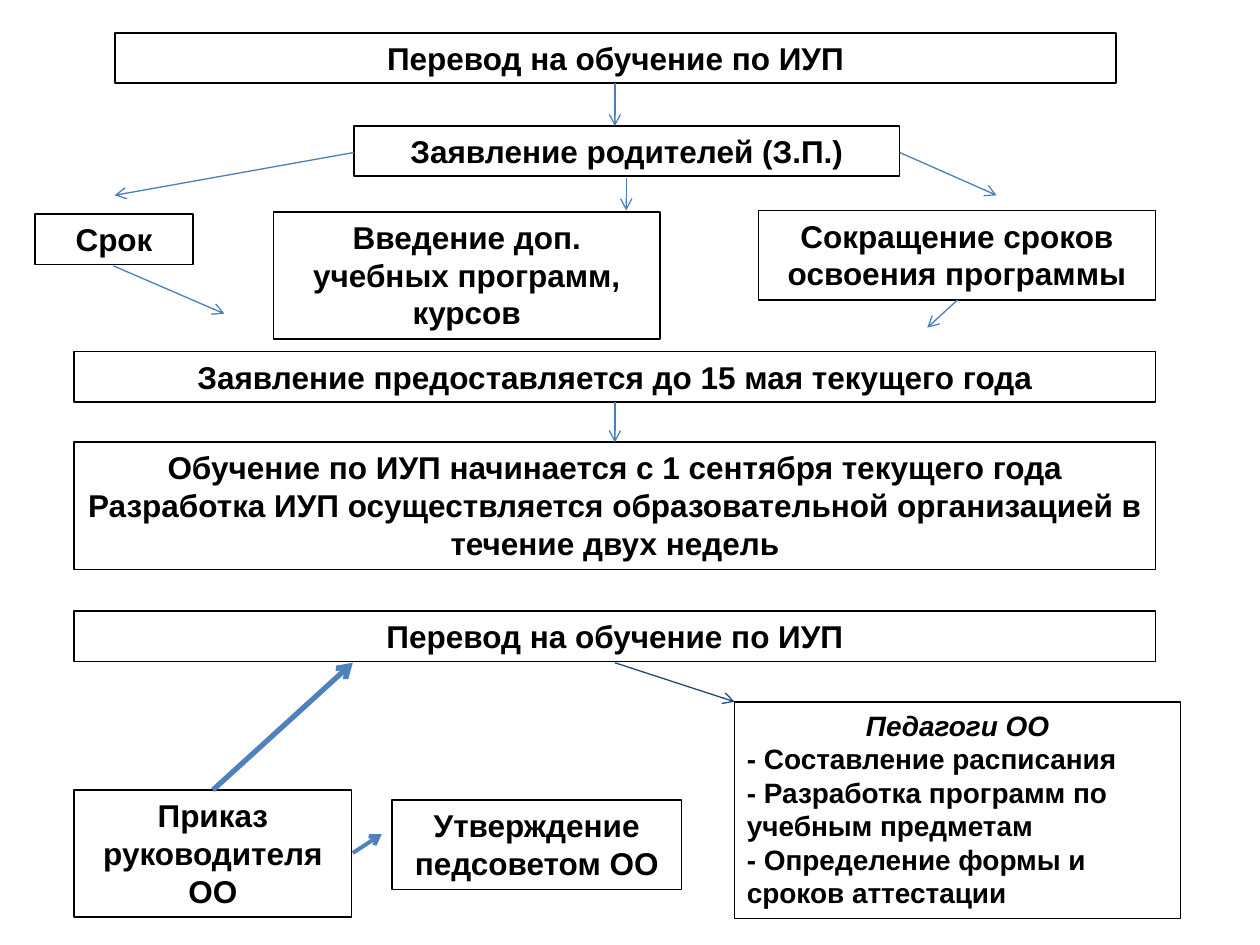
from lxml import etree
from pptx import Presentation
from pptx.dml.color import RGBColor
from pptx.enum.shapes import MSO_CONNECTOR
from pptx.enum.text import MSO_ANCHOR, MSO_AUTO_SIZE, PP_ALIGN
from pptx.oxml.ns import qn
from pptx.util import Inches, Pt

STRAIGHT = MSO_CONNECTOR.STRAIGHT
TOP = MSO_ANCHOR.TOP
FIXED, GROW = MSO_AUTO_SIZE.NONE, MSO_AUTO_SIZE.SHAPE_TO_FIT_TEXT
LEFT, CENTER = PP_ALIGN.LEFT, PP_ALIGN.CENTER

FONT = "Arial"
BLACK, BLUE, BOLD_BLUE, NAVY = "000000", "4B7EBC", "4F81BD", "1F497D"
ROW = 0.4  # height of a one-line box


def color(code):
    return RGBColor.from_string(code)


def write(par, text, size=18, align=CENTER, italic=False):
    par.alignment = align
    run = par.add_run()
    run.text = text
    font = run.font
    font.name, font.size = FONT, Pt(size)
    font.bold, font.italic = True, italic
    font.color.rgb = color(BLACK)


def frame(shape, fit=GROW):
    """Outline a text shape and let it wrap."""
    shape.fill.background()
    shape.line.color.rgb = color(BLACK)
    shape.line.width = Pt(1)
    text = shape.text_frame
    text.word_wrap = True
    text.auto_size = fit
    text.vertical_anchor = TOP
    return text


def card(slide, box, x, y, w, h, *lines):
    """Add a framed box; each line is a dict of options for write."""
    shape = slide.shapes.add_textbox(
        Inches(box[0] + x), Inches(box[1] + y), Inches(w), Inches(h))
    text = frame(shape)
    for i, line in enumerate(lines):
        par = text.add_paragraph() if i else text.paragraphs[0]
        write(par, **line)


def arrow(slide, box, start, end, code=BLUE, width=0.75):
    ends = [Inches(box[i] + point[i]) for point in (start, end) for i in (0, 1)]
    link = slide.shapes.add_connector(STRAIGHT, *ends)
    link.line.color.rgb = color(code)
    link.line.width = Pt(width)
    head = etree.SubElement(link.line._get_or_add_ln(), qn("a:tailEnd"))
    head.set("type", "arrow")
    etree.SubElement(link._element.spPr, qn("a:effectLst"))


def request(slide, box):
    """Title, parents' request and its three subjects."""
    # The title keeps a fixed height: its placeholder would grow too tall
    title = slide.shapes.title
    title.left, title.top = Inches(box[0] + 0.91), Inches(box[1] + 0.26)
    title.width, title.height = Inches(7.95), Inches(ROW)
    write(frame(title, FIXED).paragraphs[0], "Перевод на обучение по ИУП")

    for x, y, w, h, text in (
        (2.81, 1, 4.33, ROW, "Заявление родителей (З.П.)"),
        (0.28, 1.7, 1.25, ROW, "Срок"),
        (2.17, 1.68, 3.07, 1.01, "Введение доп. учебных программ, курсов"),
        (6.02, 1.67, 3.15, 0.71, "Сокращение сроков освоения программы"),
    ):
        card(slide, box, x, y, w, h, dict(text=text))

    for start, end in (
        ((4.88, 0.66), (4.88, 1)),
        ((2.81, 1.21), (0.91, 1.55)),
        ((4.97, 1.41), (4.97, 1.67)),
        ((7.14, 1.21), (7.91, 1.55)),
        ((0.9, 2.11), (1.78, 2.49)),
        ((7.6, 2.38), (7.36, 2.6)),
    ):
        arrow(slide, box, start, end)


def dates(slide, box):
    """Deadline for the request, then the start of study."""
    width, mid = box[2], box[2] / 2
    card(slide, box, 0, 0, width, ROW,
         dict(text="Заявление предоставляется до 15 мая текущего года"))
    card(slide, box, 0, 0.72, width, 1.01,
         dict(text="Обучение по ИУП начинается с 1 сентября текущего года"),
         dict(text="Разработка ИУП осуществляется образовательной "
                   "организацией в течение двух недель"))
    arrow(slide, box, (mid, ROW), (mid, 0.72))


def transfer(slide, box):
    """Transfer, the order behind it and the teachers' tasks."""
    width, mid = box[2], box[2] / 2
    card(slide, box, 0, 0, width, ROW, dict(text="Перевод на обучение по ИУП"))
    card(slide, box, 0, 1.42, 2.2, 1.01, dict(text="Приказ руководителя ОО"))
    card(slide, box, 2.52, 1.5, 2.3, 0.71, dict(text="Утверждение педсоветом ОО"))

    # Teachers' tasks
    tasks = ("- Составление расписания",
             "- Разработка программ по учебным предметам",
             "- Определение формы и сроков аттестации")
    card(slide, box, 5.24, 0.72, 3.54, 1.72,
         dict(text="Педагоги ОО", size=16, italic=True),
         *(dict(text=task, size=16, align=LEFT) for task in tasks))

    arrow(slide, box, (1.1, 1.42), (2.21, 0.41), BOLD_BLUE, 3)
    arrow(slide, box, (2.21, 1.92), (2.44, 1.77), BOLD_BLUE, 2.25)
    arrow(slide, box, (mid, 0.41), (5.24, 0.72), NAVY)


def main():
    deck = Presentation()
    deck.slide_width, deck.slide_height = Inches(10), Inches(7.5)
    slide = deck.slides.add_slide(deck.slide_layouts[5])
    request(slide, (0, 0, 10, 2.7))
    dates(slide, (0.59, 2.79, 8.58, 1.73))
    transfer(slide, (0.59, 4.85, 8.58, 2.44))
    deck.save("out.pptx")


if __name__ == "__main__":
    main()
